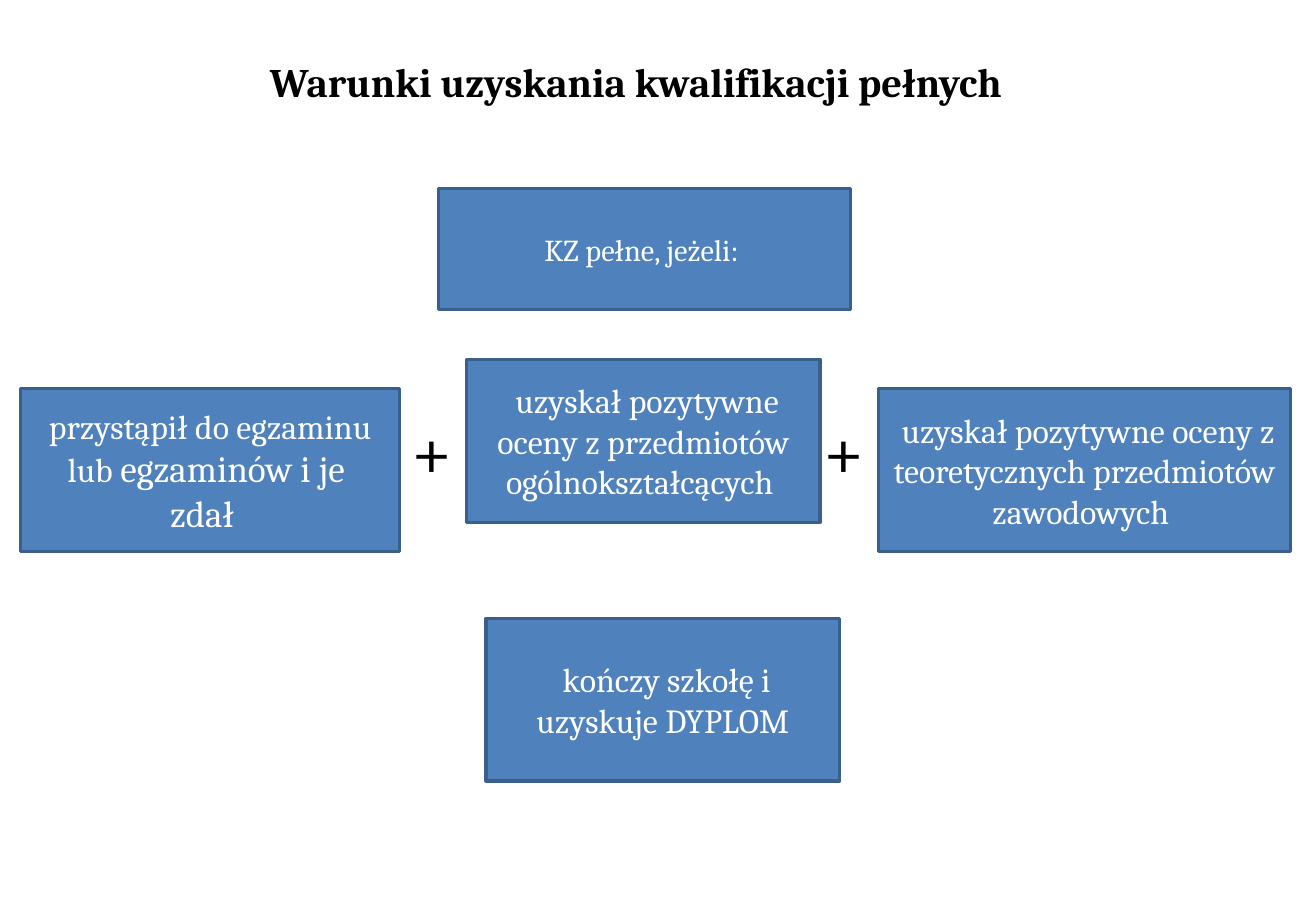
from pptx import Presentation
from pptx.dml.color import RGBColor
from pptx.enum.shapes import MSO_SHAPE
from pptx.enum.text import MSO_ANCHOR, PP_ALIGN
from pptx.util import Inches, Pt

BLACK = RGBColor(0x00, 0x00, 0x00)
WHITE = RGBColor(0xFF, 0xFF, 0xFF)
BLUE = RGBColor(0x4F, 0x81, 0xBD)
DARK_BLUE = RGBColor(0x3A, 0x5F, 0x8C)

TITLE = "Warunki uzyskania kwalifikacji pełnych"
CONDITIONS = [
    ((3.61, 1.55, 3.39, 1), [("KZ pełne, jeżeli: ", 18)]),
    ((0.17, 3.2, 3.12, 1.34),
     [("przystąpił do egzaminu lub ", 20), ("egzaminów i je  zdał  ", 22)]),
    ((3.84, 2.96, 2.91, 1.34),
     [(" uzyskał pozytywne oceny z przedmiotów ogólnokształcących ", 20)]),
    ((7.23, 3.2, 3.39, 1.34),
     [(" uzyskał pozytywne oceny z teoretycznych przedmiotów zawodowych ", 20)]),
    ((4, 5.09, 2.91, 1.34), [(" kończy szkołę i uzyskuje DYPLOM", 20)]),
]
PLUS_LEFTS = (3.29, 6.68)


def write(paragraph, runs, color, bold=False):
    """Add the runs to a paragraph in the slide's font."""
    for wording, size in runs:
        run = paragraph.add_run()
        run.text = wording
        style = {"name": "Cambria", "size": Pt(size), "bold": bold}
        for key, value in style.items():
            setattr(run.font, key, value)
        run.font.color.rgb = color


def add_condition(slide, place, runs):
    """Add one blue box with centred wording."""
    box = slide.shapes.add_shape(MSO_SHAPE.RECTANGLE, *map(Inches, place))
    box.shadow.inherit = False
    box.fill.solid()
    box.fill.fore_color.rgb = BLUE
    box.line.color.rgb = DARK_BLUE
    box.line.width = Pt(2)
    frame = box.text_frame
    frame.word_wrap = True
    frame.vertical_anchor = MSO_ANCHOR.MIDDLE
    frame.paragraphs[0].alignment = PP_ALIGN.CENTER
    write(frame.paragraphs[0], runs, WHITE)


def main():
    """Build and save the slide."""
    deck = Presentation()
    deck.slide_width, deck.slide_height = Inches(10.83), Inches(7.5)
    slide = deck.slides.add_slide(deck.slide_layouts[5])

    title = slide.shapes.title
    place = {"left": 2.12, "top": 0.16, "width": 8.55, "height": 1.02}
    for key, value in place.items():
        setattr(title, key, Inches(value))
    title.text_frame.vertical_anchor = MSO_ANCHOR.MIDDLE
    title.text_frame.paragraphs[0].alignment = PP_ALIGN.LEFT
    write(title.text_frame.paragraphs[0], [(TITLE, 24)], BLACK, bold=True)

    for place, runs in CONDITIONS:
        add_condition(slide, place, runs)

    for left in PLUS_LEFTS:
        plus = slide.shapes.add_textbox(*map(Inches, (left, 3.28, 0.54, 0.84)))
        plus.text_frame.word_wrap = False
        write(plus.text_frame.paragraphs[0], [("+", 44)], BLACK)

    deck.save("out.pptx")


if __name__ == "__main__":
    main()
